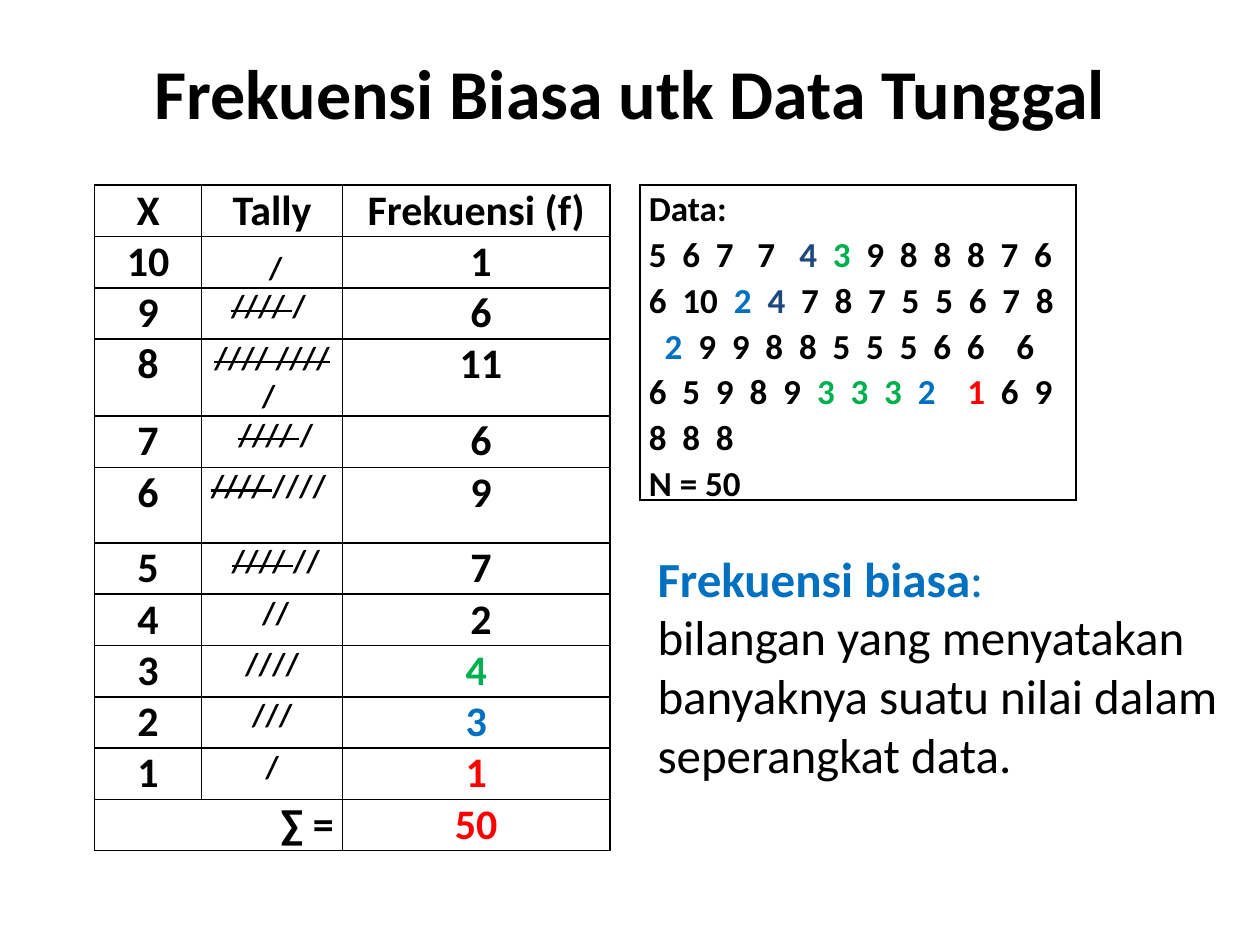
from lxml import etree
from pptx import Presentation
from pptx.dml.color import RGBColor
from pptx.enum.text import MSO_ANCHOR, MSO_AUTO_SIZE, PP_ALIGN
from pptx.oxml.ns import qn
from pptx.util import Inches, Pt

LEFT, CENTER, RIGHT = PP_ALIGN.LEFT, PP_ALIGN.CENTER, PP_ALIGN.RIGHT
TOP, MIDDLE, BOTTOM = MSO_ANCHOR.TOP, MSO_ANCHOR.MIDDLE, MSO_ANCHOR.BOTTOM
HARD_SPACE = chr(160)

THEME = {
    "font": "Calibri",
    "title": 40, "definition": 28, "cell": 24, "data": 20, "tally": 18,
    "black": "000000", "navy": "1F497D", "green": "00B050",
    "blue": "0070C0", "red": "FF0000", "border": 1,
}

# Content
TITLE = "Frekuensi Biasa utk Data Tunggal"
HEADERS = ["X", "Tally", "Frekuensi (f)"]
# Value, frequency, colour, hard space before and after the tally marks
FREQUENCIES = [
    (10, 1, "black", True, False),
    (9, 6, "black", False, True),
    (8, 11, "black", False, True),
    (7, 6, "black", True, False),
    (6, 9, "black", False, True),
    (5, 7, "black", True, False),
    (4, 2, "black", True, False),
    (3, 4, "green", False, False),
    (2, 3, "blue", False, False),
    (1, 1, "red", False, False),
]
TOTAL_LABEL = "∑ ="
DATA_LINES = [
    [("Data:", "black")],
    [("5  6  7   7   ", "black"), ("4  ", "navy"), ("3", "green"),
     ("  9  8  8  8  7  6  6  10  ", "black"), ("2  ", "blue"), ("4", "navy"),
     ("  7  8  7  5  5  6  7  8    ", "black"), ("2  ", "blue"),
     ("9  9  8  8  5  5  5  6  6    6  6  5  9  8  9  ", "black"),
     ("3  3  3  ", "green"), ("2    ", "blue"), ("1", "red"),
     ("  6  9  8  8  8", "black")],
    [("N = 50", "black")],
]
DEFINITION = [
    [("Frekuensi biasa", "blue", True), (":", "blue", False)],
    [("bilangan yang menyatakan banyaknya suatu nilai dalam seperangkat data.",
      "black", False)],
]

# Layout
TABLE_TOP = 1.47
COLUMN_WIDTHS = [0.85, 1.12, 2.12]
ROW_HEIGHT, TALL_ROW_HEIGHT = 0.4, 0.6
TALL_VALUES = (8, 6)


def add_run(paragraph, text, size, color="black", bold=True, strike=False):
    run = paragraph.add_run()
    run.text = text
    run.font.name = THEME["font"]
    run.font.size = Pt(THEME[size])
    run.font.bold = bold
    run.font.color.rgb = RGBColor.from_string(THEME[color])
    if strike:
        run.font._element.set("strike", "sngStrike")


def add_plain_table(slide, rows, left, widths, height):
    frame = slide.shapes.add_table(
        rows, len(widths), Inches(left), Inches(TABLE_TOP),
        Inches(sum(widths)), Inches(height))
    table = frame.table
    table.first_row = table.horz_banding = False
    for column, width in zip(table.columns, widths):
        column.width = Inches(width)
    for cell in table.iter_cells():
        format_cell(cell)
    return table


def format_cell(cell):
    cell.margin_left = cell.margin_right = Inches(0.07)
    cell.margin_top = cell.margin_bottom = 0
    properties = cell._tc.get_or_add_tcPr()
    for side in ("lnL", "lnR", "lnT", "lnB"):
        line = etree.SubElement(properties, qn(f"a:{side}"),
                                w=str(Pt(THEME["border"])))
        fill = etree.SubElement(line, qn("a:solidFill"))
        etree.SubElement(fill, qn("a:srgbClr"), val=THEME["black"])
    cell.fill.background()


def start_cell(cell, alignment=CENTER, anchor=TOP):
    cell.vertical_anchor = anchor
    paragraph = cell.text_frame.paragraphs[0]
    paragraph.alignment = alignment
    return paragraph


def add_tally(paragraph, frequency, space_before, space_after):
    fives, rest = divmod(frequency, 5)
    before = HARD_SPACE * space_before
    loose = "/" * rest + HARD_SPACE * space_after
    if fives:
        if before:
            add_run(paragraph, before, "tally")
        add_run(paragraph, "//// " * fives, "tally", strike=True)
        add_run(paragraph, loose, "tally")
    else:
        add_run(paragraph, before + loose, "tally")


def add_frequency_table(slide):
    row_count = len(FREQUENCIES) + 2
    table = add_plain_table(slide, row_count, 0.75, COLUMN_WIDTHS,
                            ROW_HEIGHT * row_count)
    for row in table.rows:
        row.height = Inches(ROW_HEIGHT)
    for column, header in enumerate(HEADERS):
        add_run(start_cell(table.cell(0, column), anchor=MIDDLE), header, "cell")

    for index, record in enumerate(FREQUENCIES, start=1):
        value, frequency, color, space_before, space_after = record
        if value in TALL_VALUES:
            table.rows[index].height = Inches(TALL_ROW_HEIGHT)
        add_run(start_cell(table.cell(index, 0)), str(value), "cell")
        anchor = BOTTOM if index == 1 else TOP
        add_tally(start_cell(table.cell(index, 1), anchor=anchor),
                  frequency, space_before, space_after)
        lead = HARD_SPACE if color == "black" else ""
        add_run(start_cell(table.cell(index, 2)), f"{lead}{frequency}",
                "cell", color)

    # Total row
    last = row_count - 1
    table.cell(last, 0).merge(table.cell(last, 1))
    add_run(start_cell(table.cell(last, 0), RIGHT), TOTAL_LABEL, "cell")
    total = sum(record[1] for record in FREQUENCIES)
    add_run(start_cell(table.cell(last, 2)), str(total), "cell", "red")


def add_data_box(slide):
    cell = add_plain_table(slide, 1, 5.08, [3.46], 2.5).cell(0, 0)
    paragraph = start_cell(cell, LEFT)
    for index, line in enumerate(DATA_LINES):
        if index:
            paragraph = cell.text_frame.add_paragraph()
        paragraph.line_spacing = 1.07
        for text, color in line:
            add_run(paragraph, text, "data", color)


def add_definition(slide):
    box = slide.shapes.add_textbox(Inches(5.12), Inches(4.3),
                                   Inches(4.88), Inches(1.99))
    frame = box.text_frame
    frame.word_wrap = True
    frame.auto_size = MSO_AUTO_SIZE.SHAPE_TO_FIT_TEXT
    for index, line in enumerate(DEFINITION):
        paragraph = frame.add_paragraph() if index else frame.paragraphs[0]
        for text, color, bold in line:
            add_run(paragraph, text, "definition", color, bold)


def main():
    presentation = Presentation()
    presentation.slide_width, presentation.slide_height = Inches(10), Inches(7.5)
    slide = presentation.slides.add_slide(presentation.slide_layouts[5])

    # Title
    title = slide.shapes.title
    title.left, title.top = Inches(0.5), Inches(0.3)
    title.width, title.height = Inches(9), Inches(0.85)
    title.text_frame.vertical_anchor = MIDDLE
    paragraph = title.text_frame.paragraphs[0]
    paragraph.alignment = CENTER
    add_run(paragraph, TITLE, "title")

    add_frequency_table(slide)
    add_definition(slide)
    add_data_box(slide)
    presentation.save("out.pptx")


if __name__ == "__main__":
    main()
